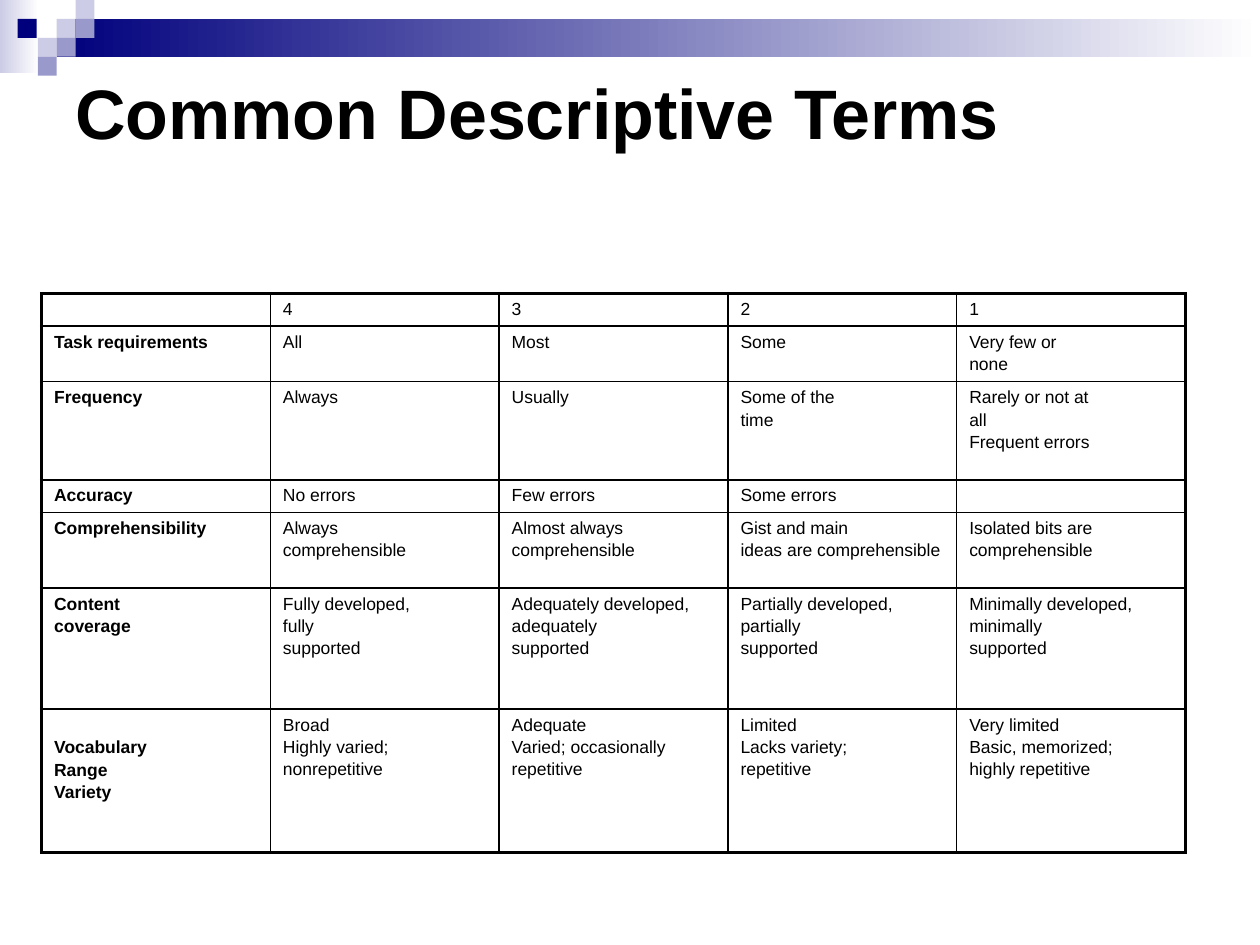
from lxml.etree import SubElement
from pptx import Presentation
from pptx.dml.color import RGBColor
from pptx.enum.shapes import MSO_SHAPE as Shape
from pptx.enum.text import MSO_ANCHOR as Anchor
from pptx.oxml.ns import qn
from pptx.util import Inches, Pt

NAVY, LILAC, LAVENDER = "00007D", "9999CC", "CCCCE6"
WHITE, BLACK = "FFFFFF", "000000"


def color(hex_string):
    return RGBColor.from_string(hex_string)


def add_border(cell, side, width):
    """Draw one side of a cell: L, R, T or B, with the width in points."""
    line = SubElement(cell._tc.get_or_add_tcPr(), qn(f"a:ln{side}"), w=str(Pt(width)))
    SubElement(SubElement(line, qn("a:solidFill")), qn("a:srgbClr"), val=BLACK)


presentation = Presentation()
presentation.slide_width = Inches(10)
presentation.slide_height = Inches(7.5)
slide = presentation.slides.add_slide(presentation.slide_layouts[6])

# Header: two gradient bars and a mosaic of small squares
SQUARE = 0.15
header = [
    (0, 0, 0.31, 0.58, [LAVENDER, WHITE]),
    (0.45, 0.15, 9.55, 0.3, [NAVY, WHITE]),
]
mosaic = [
    (0.45, 0.15, LAVENDER), (0.6, 0, LAVENDER), (0.6, 0.15, LILAC),
    (0.3, 0.3, LAVENDER), (0.14, 0.15, NAVY), (0.45, 0.3, LILAC),
    (0.3, 0.45, LILAC),
]
header += [(left, top, SQUARE, SQUARE, [fill]) for left, top, fill in mosaic]

for left, top, width, height, colors in header:
    shape = slide.shapes.add_shape(
        Shape.RECTANGLE, Inches(left), Inches(top), Inches(width), Inches(height))
    shape.shadow.inherit = False
    shape.line.fill.background()
    if len(colors) == 1:
        shape.fill.solid()
        shape.fill.fore_color.rgb = color(colors[0])
    else:
        shape.fill.gradient()
        shape.fill.gradient_angle = 0
        for stop, stop_color in zip(shape.fill.gradient_stops, colors):
            stop.color.rgb = color(stop_color)

# Rubric table: each line of a cell is a paragraph
rubric = [
    ["", "4", "3", "2", "1"],
    ["Task requirements", "All", "Most", "Some", "Very few or\nnone"],
    ["Frequency", "Always", "Usually", "Some of the\ntime",
     "Rarely or not at\nall\nFrequent errors"],
    ["Accuracy", "No errors", "Few errors", "Some errors", ""],
    ["Comprehensibility", "Always\ncomprehensible", "Almost always\ncomprehensible",
     "Gist and main\nideas are comprehensible", "Isolated bits are\ncomprehensible"],
    ["Content\ncoverage", "Fully developed,\nfully\nsupported",
     "Adequately developed,\nadequately\nsupported",
     "Partially developed,\npartially\nsupported",
     "Minimally developed,\nminimally\nsupported"],
    ["Vocabulary\nRange\nVariety", "Broad\nHighly varied;\nnonrepetitive",
     "Adequate\nVaried; occasionally\nrepetitive",
     "Limited\nLacks variety;\nrepetitive",
     "Very limited\nBasic, memorized;\nhighly repetitive"],
]
row_heights = [0.25, 0.44, 0.78, 0.25, 0.6, 0.96, 1.14]
last_row, last_column = len(rubric) - 1, len(rubric[0]) - 1

table = slide.shapes.add_table(
    len(rubric), len(rubric[0]), Inches(0.33), Inches(2.33),
    Inches(9.08), Inches(sum(row_heights))).table
table.first_row = table.horz_banding = False
for column in table.columns:
    column.width = Inches(9.08 / len(rubric[0]))

for row, (texts, height) in enumerate(zip(rubric, row_heights)):
    table.rows[row].height = Inches(height)
    for column, text in enumerate(texts):
        cell = table.cell(row, column)
        cell.margin_top, cell.margin_bottom = Inches(0.05), Inches(0.04)
        outer_sides = {"L": column == 0, "R": column == last_column,
                       "T": row == 0, "B": row == last_row}
        for side, is_outer in outer_sides.items():
            add_border(cell, side, 2.25 if is_outer else 1)
        cell.fill.background()

        frame = cell.text_frame
        if not text:
            SubElement(frame.paragraphs[0]._p, qn("a:endParaRPr"), sz="1000")
            continue
        for index, words in enumerate(text.split("\n")):
            paragraph = frame.add_paragraph() if index else frame.paragraphs[0]
            paragraph.space_before = Pt(1.65 if index else 0)
            run = paragraph.add_run()
            run.text = words
            run.font.name = "Arial"
            run.font.size = Pt(10)
            run.font.bold = column == 0
            run.font.color.rgb = color(BLACK)

# The vocabulary heading starts one line lower than its row
table.cell(last_row, 0).margin_top = Inches(0.23)

# Title
title = slide.shapes.add_textbox(Inches(0.5), Inches(0.5), Inches(9.17), Inches(0.77))
title.text_frame.word_wrap = True
title.text_frame.vertical_anchor = Anchor.BOTTOM
run = title.text_frame.paragraphs[0].add_run()
run.text = "Common Descriptive Terms"
run.font.name = "Arial"
run.font.size = Pt(40)
run.font.bold = True
run.font.color.rgb = color(BLACK)

presentation.save("out.pptx")
